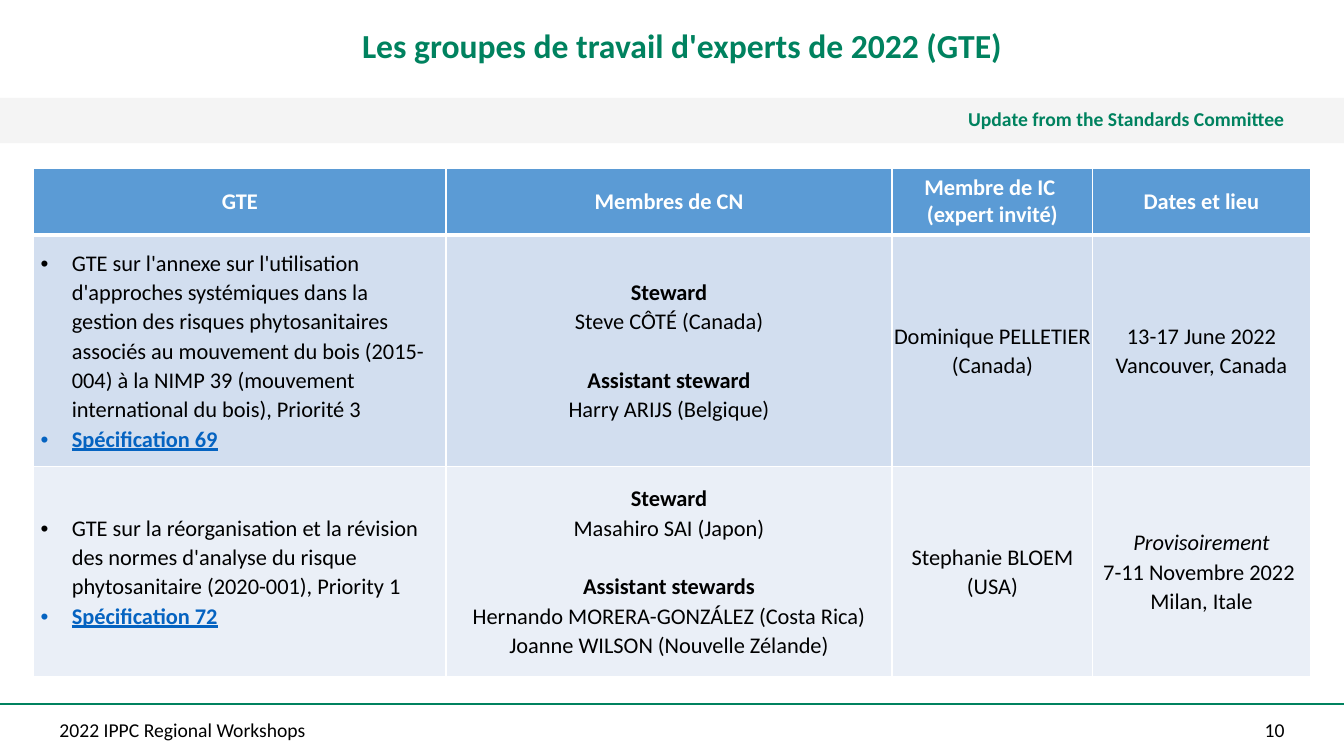
from lxml.etree import SubElement
from pptx import Presentation
from pptx.dml.color import RGBColor
from pptx.enum.shapes import MSO_CONNECTOR, MSO_SHAPE
from pptx.enum.text import MSO_ANCHOR, PP_ALIGN
from pptx.oxml.ns import qn
from pptx.util import Inches, Pt

GREEN = RGBColor(0x00, 0x82, 0x5F)
BLACK = RGBColor(0x00, 0x00, 0x00)
WHITE = RGBColor(0xFF, 0xFF, 0xFF)
LINK_BLUE = RGBColor(0x05, 0x63, 0xC1)
BAND_GREY = RGBColor(0xE7, 0xE6, 0xE6)
HEADER_BLUE = RGBColor(0x5B, 0x9B, 0xD5)
ROW_FILLS = [RGBColor(0xD2, 0xDE, 0xEF), RGBColor(0xEA, 0xEF, 0xF7)]

COLUMNS, ROWS = 160, 90

SMALL = {"size": Pt(14), "color": BLACK}
SMALL_GREEN = {"size": Pt(14), "color": GREEN, "bold": True}
TITLE = {"size": Pt(24), "color": GREEN, "bold": True}
BODY = {"size": Pt(16), "color": BLACK, "bold": False}
BOLD = BODY | {"bold": True}
ITALIC = BODY | {"italic": True}
LINK = BOLD | {"color": LINK_BLUE, "underline": True}
HEADER = BOLD | {"color": WHITE}

CENTERED = {"alignment": PP_ALIGN.CENTER}
BODY_LINE = CENTERED | {"line_spacing": 1.07}
BULLET_LINE = {"alignment": PP_ALIGN.LEFT, "line_spacing": 1.07}
NEW_ROLE = BODY_LINE | {"space_before": Pt(21)}

HEADINGS = ["GTE", "Membres de CN", "Membre de IC \n(expert invité)", "Dates et lieu"]
GROUPS = [
    [
        [("GTE sur l'annexe sur l'utilisation d'approches systémiques dans la gestion "
          "des risques phytosanitaires associés au mouvement du bois (2015-004) à la "
          "NIMP 39 (mouvement international du bois), Priorité 3", BODY, BULLET_LINE),
         ("Spécification 69", LINK, BULLET_LINE)],
        [("Steward", BOLD, BODY_LINE),
         ("Steve CÔTÉ (Canada)", BODY, BODY_LINE),
         ("Assistant steward", BOLD, NEW_ROLE),
         ("Harry ARIJS (Belgique)", BODY, BODY_LINE)],
        [("Dominique PELLETIER (Canada)", BODY, BODY_LINE)],
        [("13-17 June 2022", BODY, BODY_LINE),
         ("Vancouver, Canada", BODY, BODY_LINE)],
    ],
    [
        [("GTE sur la réorganisation et la révision des normes d'analyse du risque "
          "phytosanitaire (2020-001), Priority 1", BODY, BULLET_LINE),
         ("Spécification 72", LINK, BULLET_LINE)],
        [("Steward", BOLD, BODY_LINE),
         ("Masahiro SAI (Japon)", BODY, BODY_LINE),
         ("Assistant stewards", BOLD, NEW_ROLE),
         ("Hernando MORERA-GONZÁLEZ (Costa Rica)", BODY, BODY_LINE),
         ("Joanne WILSON (Nouvelle Zélande)", BODY, BODY_LINE)],
        [("Stephanie BLOEM (USA)", BODY, BODY_LINE)],
        [("Provisoirement", ITALIC, BODY_LINE),
         ("7-11 Novembre 2022 ", BODY, BODY_LINE),
         ("Milan, Itale", BODY, BODY_LINE)],
    ],
]


def set_format(target, values):
    for name, value in values.items():
        if name == "color":
            target.color.rgb = value
        else:
            setattr(target, name, value)


class Deck:
    font = "Calibri"

    def __init__(self):
        self.presentation = Presentation()
        set_format(self.presentation, {"slide_width": Inches(13.33), "slide_height": Inches(7.5)})
        self.slide = self.presentation.slides.add_slide(self.presentation.slide_layouts[5])

    def across(self, columns):
        return round(self.presentation.slide_width * columns / COLUMNS)

    def down(self, rows):
        return round(self.presentation.slide_height * rows / ROWS)

    def area(self, left, top, width, height):
        return self.across(left), self.down(top), self.across(width), self.down(height)

    def set_lines(self, frame, lines):
        for index, (text, font, layout) in enumerate(lines):
            paragraph = frame.add_paragraph() if index else frame.paragraphs[0]
            paragraph.text = text
            if layout is BULLET_LINE:
                self.bullet(paragraph)
            set_format(paragraph, layout)
            for run in paragraph.runs:
                set_format(run.font, {"name": self.font} | font)

    def bullet(self, paragraph):
        properties = paragraph._p.get_or_add_pPr()
        properties.set("marL", str(Inches(0.31)))
        properties.set("indent", str(-Inches(0.31)))
        SubElement(properties, qn("a:buFont"), typeface="Arial")
        SubElement(properties, qn("a:buChar"), char="•")

    def fill_frame(self, frame, line, right=0.59, top=0.05):
        set_format(frame, {"word_wrap": True, "vertical_anchor": MSO_ANCHOR.MIDDLE,
                           "margin_left": Inches(0.59), "margin_right": Inches(right),
                           "margin_top": Inches(top), "margin_bottom": Inches(0.05)})
        self.set_lines(frame, [line])

    def title(self, text, *place):
        heading = self.slide.shapes.title
        set_format(heading, dict(zip(("left", "top", "width", "height"), self.area(*place))))
        self.fill_frame(heading.text_frame, (text, TITLE, CENTERED | {"line_spacing": 0.9}), 0.39, 0)

    def label(self, text, alignment, *place):
        box = self.slide.shapes.add_textbox(*self.area(*place))
        self.fill_frame(box.text_frame, (text, SMALL, {"alignment": alignment, "line_spacing": 0.9}))

    def band(self, text, *place):
        strip = self.slide.shapes.add_shape(MSO_SHAPE.RECTANGLE, *self.area(*place))
        strip.shadow.inherit = False
        strip.fill.solid()
        strip.fill.fore_color.rgb = BAND_GREY
        tint = strip._element.spPr.find(qn("a:solidFill"))[0]
        SubElement(tint, qn("a:alpha"), val="42000")
        strip.line.fill.background()
        layout = {"alignment": PP_ALIGN.RIGHT, "line_spacing": 0.9}
        self.fill_frame(strip.text_frame, (text, SMALL_GREEN, layout))

    def rule(self, row):
        height = self.down(row)
        line = self.slide.shapes.add_connector(
            MSO_CONNECTOR.STRAIGHT, 0, height, self.across(COLUMNS), height)
        line.line.color.rgb = GREEN
        line.line.width = Pt(1)
        SubElement(line._element.spPr, qn("a:effectLst"))

    def cell(self, cell, lines, fill, margin, top=1, bottom=1):
        set_format(cell, {"vertical_anchor": MSO_ANCHOR.MIDDLE, "margin_top": 0, "margin_bottom": 0,
                          "margin_left": Inches(margin), "margin_right": Inches(margin)})
        properties = cell._tc.get_or_add_tcPr()
        for side, width in {"L": 1, "R": 1, "T": top, "B": bottom}.items():
            border = SubElement(properties, qn(f"a:ln{side}"), w=str(Pt(width)))
            SubElement(SubElement(border, qn("a:solidFill")), qn("a:srgbClr"), val=str(WHITE))
        cell.fill.solid()
        cell.fill.fore_color.rgb = fill
        self.set_lines(cell.text_frame, lines)

    def table(self, left, top, widths, heights):
        place = self.area(left, top, sum(widths), sum(heights))
        table = self.slide.shapes.add_table(len(heights), len(widths), *place).table
        table.horz_banding = False
        for column, width in zip(table.columns, widths):
            column.width = self.across(width)
        for row, height in zip(table.rows, heights):
            row.height = self.down(height)
        margins = [0.07, 0, 0, 0.07]
        for column, (heading, margin) in enumerate(zip(HEADINGS, margins)):
            self.cell(table.cell(0, column), [(heading, HEADER, CENTERED)],
                      HEADER_BLUE, margin, bottom=3)
            for row, (group, fill) in enumerate(zip(GROUPS, ROW_FILLS), 1):
                self.cell(table.cell(row, column), group[column], fill, margin,
                          top=3 if row == 1 else 1)


def main():
    deck = Deck()
    deck.rule(83.8)
    deck.label("2022 IPPC Regional Workshops", PP_ALIGN.LEFT, 0, 84.7, 99, 4.6)
    deck.band("Update from the Standards Committee", 0, 11.65, COLUMNS, 5.4)
    deck.label("10", PP_ALIGN.RIGHT, 143, 84.7, 17, 4.6)
    deck.title("Les groupes de travail d'experts de 2022 (GTE)", 0, 0, COLUMNS, 12)
    deck.table(4, 20, [49.1, 53.1, 23.9, 25.9], [8, 27.5, 25.1])
    deck.presentation.save("out.pptx")


if __name__ == "__main__":
    main()
